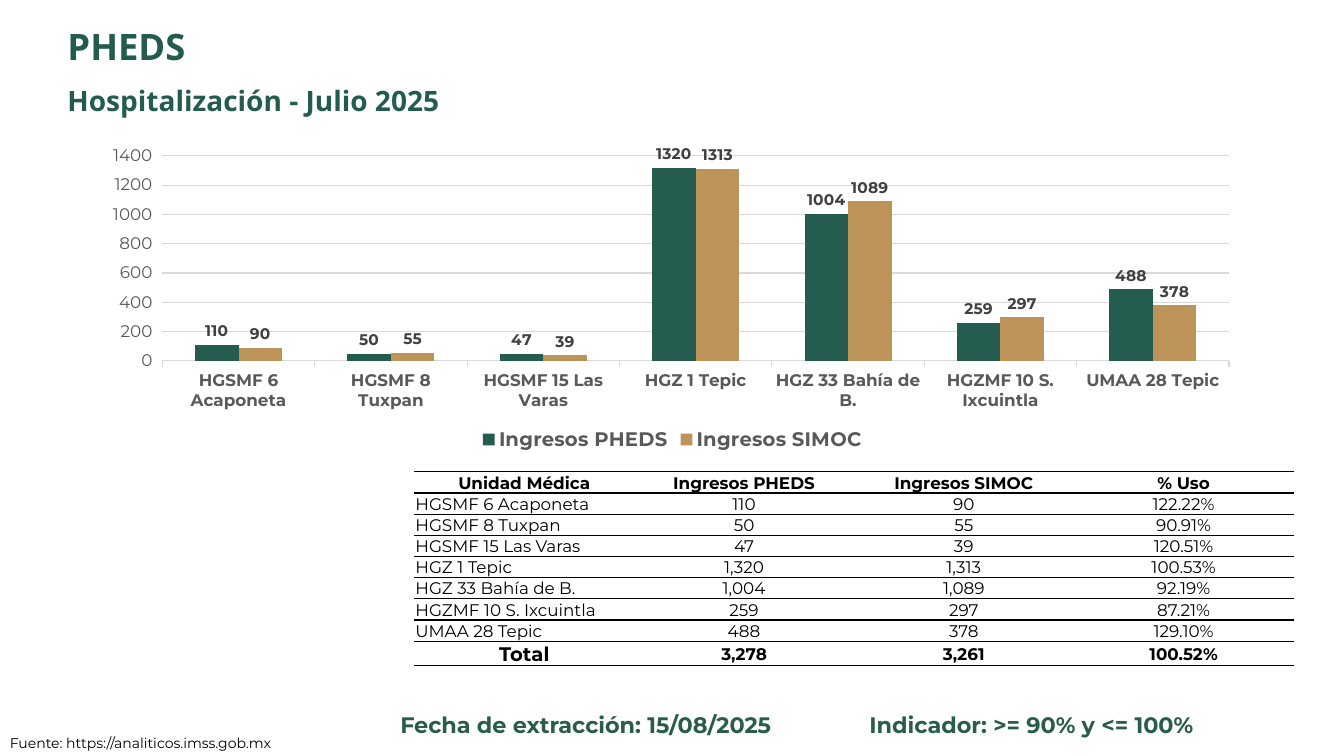
from lxml import etree
from pptx import Presentation
from pptx.chart.data import CategoryChartData
from pptx.dml.color import RGBColor
from pptx.enum.chart import XL_CHART_TYPE, XL_LABEL_POSITION, XL_LEGEND_POSITION, XL_TICK_MARK
from pptx.enum.text import MSO_ANCHOR, PP_ALIGN
from pptx.oxml import parse_xml
from pptx.oxml.ns import nsdecls
from pptx.util import Inches, Pt

COLUMNS = XL_CHART_TYPE.COLUMN_CLUSTERED
LABEL_OUTSIDE = XL_LABEL_POSITION.OUTSIDE_END
LEGEND_BOTTOM = XL_LEGEND_POSITION.BOTTOM
TICK_OUT = XL_TICK_MARK.OUTSIDE
LEFT, CENTER = PP_ALIGN.LEFT, PP_ALIGN.CENTER
TOP, MIDDLE = MSO_ANCHOR.TOP, MSO_ANCHOR.MIDDLE

COLORS = {
    "heading": "235C4F",
    "footer": "2A5C4B",
    "text": "000000",
    "pheds": "245C4F",
    "simoc": "BC945A",
    "axis": "595959",
    "label": "404040",
    "grid": "D9D9D9",
}
HEADING_FONT = "Noto Sans"
BODY_FONT = "Montserrat"

UNITS = [
    ("HGSMF 6 Acaponeta", 110, 90),
    ("HGSMF 8 Tuxpan", 50, 55),
    ("HGSMF 15 Las Varas", 47, 39),
    ("HGZ 1 Tepic", 1320, 1313),
    ("HGZ 33 Bahía de B.", 1004, 1089),
    ("HGZMF 10 S. Ixcuintla", 259, 297),
    ("UMAA 28 Tepic", 488, 378),
]
NAMES, PHEDS, SIMOC = zip(*UNITS)
SERIES = [("Ingresos PHEDS", PHEDS, "pheds"), ("Ingresos SIMOC", SIMOC, "simoc")]


class SlideBuilder:
    def __init__(self, page):
        self.page = page

    def color(self, name):
        return RGBColor.from_string(COLORS[name])

    def style(self, font, size, color, bold=False, face=BODY_FONT):
        font.name = face
        font.size = Pt(size)
        font.bold = bold
        font.color.rgb = self.color(color)

    def text(self, words, left, top, width, height, size, color="text", bold=True,
             face=BODY_FONT, align=LEFT, wrap=True, spacing=None):
        box = self.page.shapes.add_textbox(
            Inches(left), Inches(top), Inches(width), Inches(height))
        box.text_frame.word_wrap = wrap
        para = box.text_frame.paragraphs[0]
        para.text = words
        para.alignment = align
        if spacing:
            para.line_spacing = spacing
        self.style(para.font, size, color, bold, face)

    def cell(self, cell, words, size, bold, align, anchor):
        cell.fill.background()
        cell.margin_left = cell.margin_right = cell.margin_top = Inches(0.01)
        cell.margin_bottom = 0
        cell.vertical_anchor = anchor
        para = cell.text_frame.paragraphs[0]
        para.text = words
        para.alignment = align
        self.style(para.font, size, "text", bold)
        solid = f'<a:solidFill><a:srgbClr val="{COLORS["text"]}"/></a:solidFill>'
        borders = [("lnL", "<a:noFill/>"), ("lnR", "<a:noFill/>"), ("lnT", solid), ("lnB", solid)]
        properties = cell._tc.get_or_add_tcPr()
        for position, (side, fill) in enumerate(borders):
            properties.insert(position, parse_xml(
                f'<a:{side} {nsdecls("a")} w="12700">{fill}</a:{side}>'))

    def table(self, rows, left, top, column_width, row_heights):
        table = self.page.shapes.add_table(
            len(rows), len(rows[0]), Inches(left), Inches(top),
            Inches(column_width * len(rows[0])), Inches(sum(row_heights))).table
        table.first_row = table.horz_banding = False
        for column in table.columns:
            column.width = Inches(column_width)
        last = len(rows) - 1
        for i, (row, height) in enumerate(zip(rows, row_heights)):
            table.rows[i].height = Inches(height)
            for j, words in enumerate(row):
                emphasis = i in (0, last)
                unit_name = j == 0 and not emphasis
                self.cell(table.cell(i, j), words, 14 if (i, j) == (last, 0) else 12, emphasis,
                          LEFT if unit_name else CENTER, TOP if unit_name else MIDDLE)

    def line(self, line, color):
        line.color.rgb = self.color(color)
        line.width = Pt(0.75)

    def chart(self, names, series, left, top, width, height, plot_area):
        data = CategoryChartData()
        data.categories = names
        for name, values, _ in series:
            data.add_series(name, values)
        chart = self.page.shapes.add_chart(
            COLUMNS, Inches(left), Inches(top), Inches(width), Inches(height), data).chart
        self.style(chart.font, 10, "text")
        chart.has_title = False
        chart.has_legend = True
        chart.legend.position = LEGEND_BOTTOM
        chart.legend.include_in_layout = False
        self.style(chart.legend.font, 14, "axis", True)

        category_axis, value_axis = chart.category_axis, chart.value_axis
        for axis, bold in ((category_axis, True), (value_axis, False)):
            axis.major_tick_mark = TICK_OUT
            self.style(axis.tick_labels.font, 12, "axis", bold)
        self.line(category_axis.format.line, "grid")
        value_axis.format.line.fill.background()
        value_axis.minimum_scale, value_axis.maximum_scale = 0, 1400
        value_axis.major_unit = 200
        self.line(value_axis.major_gridlines.format.line, "grid")

        plot = chart.plots[0]
        plot.vary_by_categories = False
        plot.gap_width = 150
        plot.overlap = 0
        for bars, (_, _, color) in zip(plot.series, series):
            bars.format.fill.solid()
            bars.format.fill.fore_color.rgb = self.color(color)
            labels = bars.data_labels
            labels.show_value = True
            labels.position = LABEL_OUTSIDE
            self.style(labels.font, 11, "label", True)
        self.place_plot(chart, plot_area)

    def place_plot(self, chart, plot_area):
        area = chart._chartSpace.chart.plotArea
        for layout in area.xpath("c:layout"):
            area.remove(layout)
        layout = parse_xml(f'<c:layout {nsdecls("c")}><c:manualLayout/></c:layout>')
        settings = [("layoutTarget", "inner"), ("xMode", "edge"), ("yMode", "edge")]
        settings += zip("xywh", plot_area)
        namespace = layout.nsmap["c"]
        for name, value in settings:
            etree.SubElement(layout[0], f"{{{namespace}}}{name}").set("val", str(value))
        area.insert(0, layout)


def table_row(name, pheds, simoc):
    return [name, f"{pheds:,}", f"{simoc:,}", f"{pheds / simoc:.2%}"]


def main():
    deck = Presentation()
    deck.slide_width, deck.slide_height = Inches(13.33), Inches(7.5)
    builder = SlideBuilder(deck.slides.add_slide(deck.slide_layouts[6]))

    for words, top, size in (("PHEDS", 0.24, 26), ("Hospitalización - Julio 2025", 0.82, 20)):
        builder.text(words, 0.57, top, 9.48, 0.49, size, "heading",
                     face=HEADING_FONT, spacing=0.9)
    builder.text("Fuente: https://analiticos.imss.gob.mx", 0, 7.24, 2.92, 0.27, 10,
                 bold=False, wrap=False)

    rows = [["Unidad Médica", "Ingresos PHEDS", "Ingresos SIMOC", "% Uso"]]
    rows += [table_row(*unit) for unit in UNITS]
    rows.append(table_row("Total", sum(PHEDS), sum(SIMOC)))
    builder.table(rows, 4.11, 4.68, 2.18, [0.21] * (len(rows) - 1) + [0.24])

    builder.chart(NAMES, SERIES, 0.92, 1.39, 11.5, 3.13, (0.06, 0.05, 0.92, 0.65))

    for words, left, width in (("Fecha de extracción: 15/08/2025", 3.29, 5.04),
                               ("Indicador: >= 90% y <= 100%", 7.34, 5.78)):
        builder.text(words, left, 7.01, width, 0.37, 16, "footer", align=CENTER)

    deck.save("out.pptx")


if __name__ == "__main__":
    main()
